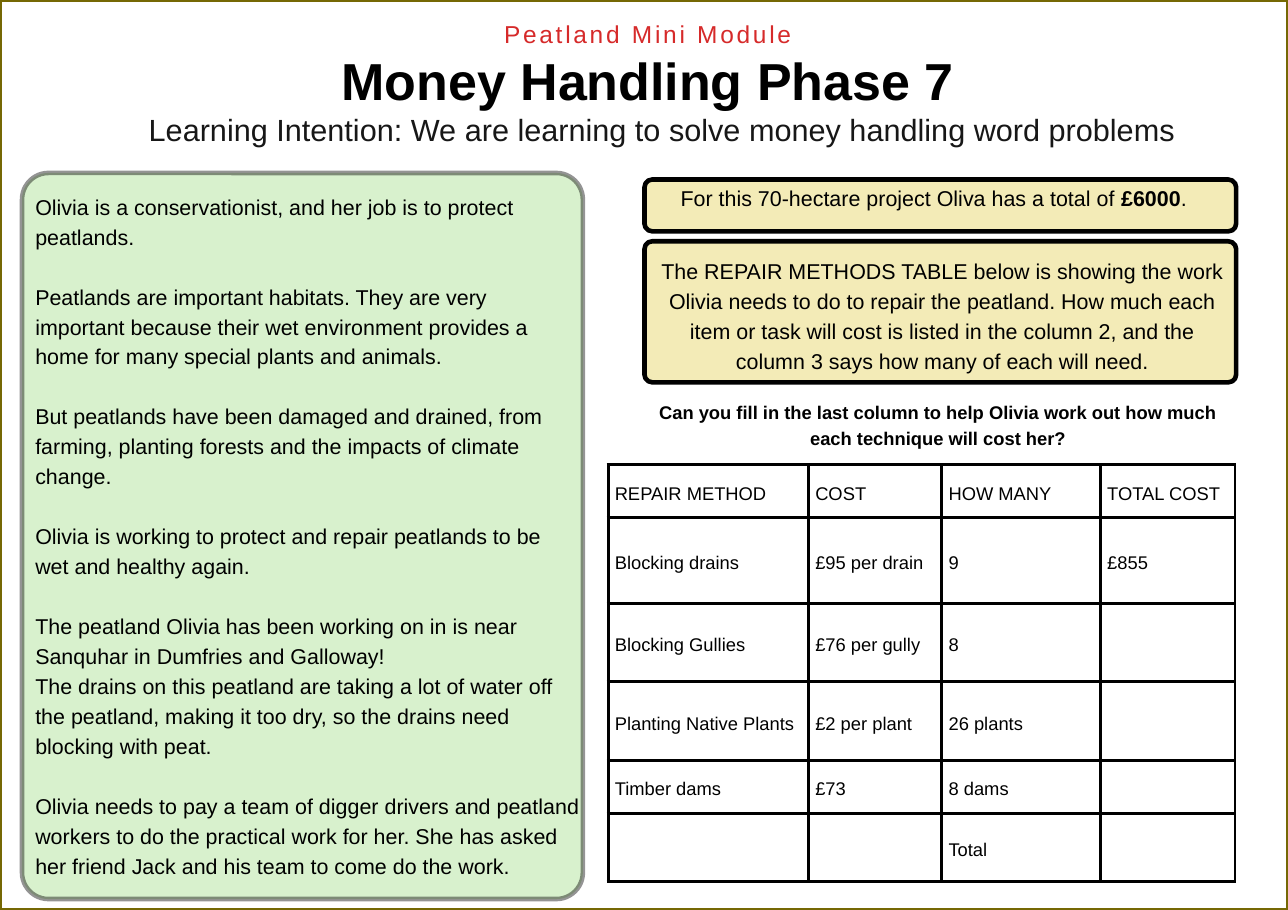
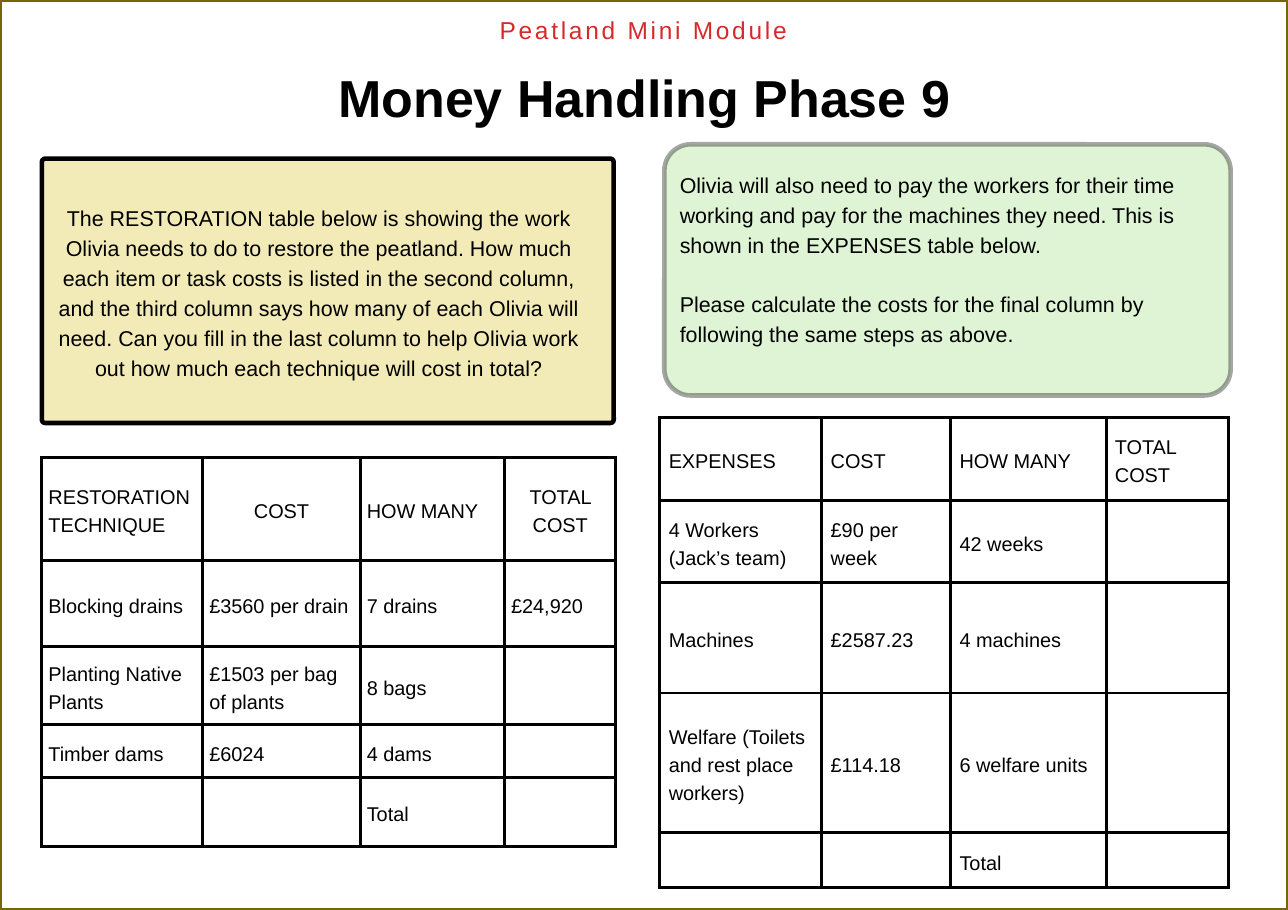
from lxml import etree
from pptx import Presentation
from pptx.dml.color import RGBColor
from pptx.enum.shapes import MSO_SHAPE
from pptx.enum.text import MSO_ANCHOR, PP_ALIGN
from pptx.oxml.ns import qn
from pptx.util import Inches, Pt

RECTANGLE, ROUNDED = MSO_SHAPE.RECTANGLE, MSO_SHAPE.ROUNDED_RECTANGLE
TOP, MIDDLE = MSO_ANCHOR.TOP, MSO_ANCHOR.MIDDLE
LEFT, CENTER = PP_ALIGN.LEFT, PP_ALIGN.CENTER
BLACK = RGBColor(0x00, 0x00, 0x00)
CHARCOAL = RGBColor(0x17, 0x17, 0x17)
RED = RGBColor(0xD6, 0x2A, 0x2A)
GREEN = RGBColor(0xA3, 0xE0, 0x89)
CREAM = RGBColor(0xF3, 0xEB, 0xB7)
OLIVE = RGBColor(0x75, 0x68, 0x04)
FONT = "Arial"
WIDTH, HEIGHT = 11.69, 8.26


def write_text(frame, text, size=14, color=BLACK, bold=False, align=LEFT,
               leading=1.4, tracking=0, joined=(), insets=None, anchor=TOP):
    if insets is not None:
        frame.word_wrap = True
        frame.vertical_anchor = anchor
        (frame.margin_left, frame.margin_top,
         frame.margin_right, frame.margin_bottom) = map(Inches, insets)
    for number, line in enumerate(text.split("\n")):
        paragraph = frame.add_paragraph() if number else frame.paragraphs[0]
        paragraph.alignment = align
        if leading:
            paragraph.line_spacing = Pt(size * leading)
        if number and number not in joined:
            paragraph.space_before = Pt(size * leading)
        for index, part in enumerate(line.split("**")):
            run = paragraph.add_run()
            run.text = part
            run.font.name = FONT
            run.font.size = Pt(size)
            run.font.color.rgb = color
            run.font.bold = bold or index % 2 == 1
            if tracking:
                run._r.get_or_add_rPr().set("spc", str(tracking))


def add_panel(slide, box, radius, fill, opacity=100):
    shape = slide.shapes.add_shape(ROUNDED, *map(Inches, box))
    shape.shadow.inherit = False
    shape.adjustments[0] = radius / min(box[2:])
    shape.fill.solid()
    shape.fill.fore_color.rgb = fill
    shape.line.color.rgb = BLACK
    shape.line.width = Pt(3)
    if opacity < 100:
        for color in shape._element.spPr.iter(qn("a:srgbClr")):
            etree.SubElement(color, qn("a:alpha"), val=str(opacity * 1000))
    return shape.text_frame


presentation = Presentation()
presentation.slide_width = Inches(WIDTH)
presentation.slide_height = Inches(HEIGHT)
phase7, phase9 = [presentation.slides.add_slide(presentation.slide_layouts[6])
                  for _ in range(2)]

add_panel(phase7, (0.2, 1.57, 5.09, 6.59), 0.24, GREEN, 42)
add_panel(phase9, (6.03, 1.31, 5.14, 2.28), 0.24, GREEN, 35)

callouts = [
    (phase7, (5.85, 1.63, 5.37, 0.47), 0.07, (0.07, 0, 0.19, 0.18),
     "For this 70-hectare project Oliva has a total of **£6000**."),
    (phase7, (5.85, 2.19, 5.37, 1.28), 0.07, (0.08, 0.05, 0.04, 0.01),
     "The REPAIR METHODS TABLE below is showing the work Olivia needs to do to "
     "repair the peatland. How much each item or task will cost is listed in the "
     "column 2, and the column 3 says how many of each will need."),
    (phase9, (0.38, 1.44, 5.19, 2.4), 0.03, (0.05, 0.07, 0.21, 0.07),
     "The RESTORATION table below is showing the work Olivia needs to do to restore "
     "the peatland. How much each item or task costs is listed in the second column, "
     "and the third column says how many of each Olivia will need. Can you fill in "
     "the last column to help Olivia work out how much each technique will cost in "
     "total?"),
]
for slide, box, radius, insets, text in callouts:
    write_text(add_panel(slide, box, radius, CREAM), text, align=CENTER,
               insets=insets, anchor=MIDDLE)

story = """Olivia is a conservationist, and her job is to protect peatlands.
Peatlands are important habitats. They are very important because their wet environment provides a home for many special plants and animals.
But peatlands have been damaged and drained, from farming, planting forests and the impacts of climate change.
Olivia is working to protect and repair peatlands to be wet and healthy again.
The peatland Olivia has been working on in is near Sanquhar in Dumfries and Galloway!
The drains on this peatland are taking a lot of water off the peatland, making it too dry, so the drains need blocking with peat.
Olivia needs to pay a team of digger drivers and peatland workers to do the practical work for her. She has asked her friend Jack and his team to come do the work."""
expenses_note = """Olivia will also need to pay the workers for their time working and pay for the machines they need. This is shown in the EXPENSES table below.
Please calculate the costs for the final column by following the same steps as above."""
module_style = dict(size=16, color=RED, align=CENTER, tracking=180)
title_style = dict(size=34, bold=True, align=CENTER, leading=50.4 / 34)
text_boxes = [
    (phase7, (3.49, 0.13, 4.78, 0.28), "Peatland Mini Module", module_style),
    (phase7, (0.86, 0.31, 10.04, 0.64), "Money Handling Phase 7", title_style),
    (phase7, (1.35, 1.01, 9.64, 0.34),
     "Learning Intention: We are learning to solve money handling word problems",
     dict(size=20, color=CHARCOAL, leading=0)),
    (phase7, (0.32, 1.72, 4.95, 6.44), story, dict(joined=(5,))),
    (phase7, (5.83, 3.61, 5.37, 0.46),
     "Can you fill in the last column to help Olivia work out how much each "
     "technique will cost her?", dict(size=12, bold=True, align=CENTER)),
    (phase9, (3.45, 0.09, 4.78, 0.28), "Peatland Mini Module", module_style),
    (phase9, (0.83, 0.46, 10.04, 0.64), "Money Handling Phase 9", title_style),
    (phase9, (6.17, 1.52, 4.86, 1.66), expenses_note, {}),
]
for slide, box, text, style in text_boxes:
    text_box = slide.shapes.add_textbox(*map(Inches, box))
    write_text(text_box.text_frame, text, insets=(0, 0, 0, 0), **style)

tables = [
    (phase7, (5.52, 4.22), 12, 0.06, (), [1.82, 1.21, 1.44, 1.22],
     [0.48, 0.78, 0.71, 0.71, 0.48, 0.62],
     [["REPAIR METHOD", "COST", "HOW MANY", "TOTAL COST"],
      ["Blocking drains", "£95 per drain", "9", "£855"],
      ["Blocking Gullies", "£76 per gully", "8", ""],
      ["Planting Native Plants", "£2 per plant", "26 plants", ""],
      ["Timber dams", "£73", "8 dams", ""],
      ["", "", "Total", ""]]),
    (phase9, (0.38, 4.15), 13, 0.06, (1, 3), [1.46, 1.43, 1.31, 1.01],
     [0.94, 0.78, 0.71, 0.48, 0.62],
     [["RESTORATION TECHNIQUE", "COST", "HOW MANY", "TOTAL COST"],
      ["Blocking drains", "£3560 per drain", "7 drains", "£24,920"],
      ["Planting Native Plants", "£1503 per bag of plants", "8 bags", ""],
      ["Timber dams", "£6024", "4 dams", ""],
      ["", "", "Total", ""]]),
    (phase9, (5.99, 3.79), 13, 0.08, (), [1.47, 1.17, 1.41, 1.11],
     [0.75, 0.75, 1, 1.27, 0.5],
     [["EXPENSES", "COST", "HOW MANY", "TOTAL COST"],
      ["4 Workers (Jack’s team)", "£90 per week", "42 weeks", ""],
      ["Machines", "£2587.23", "4 machines", ""],
      ["Welfare (Toilets and rest place workers)", "£114.18", "6 welfare units", ""],
      ["", "", "Total", ""]]),
]
for slide, corner, size, margin, centered, widths, heights, rows in tables:
    box = (*corner, sum(widths), sum(heights))
    table = slide.shapes.add_table(len(rows), len(widths), *map(Inches, box)).table
    table.first_row = table.horz_banding = False
    for column, width in zip(table.columns, widths):
        column.width = Inches(width)
    for row, height, texts in zip(table.rows, heights, rows):
        row.height = Inches(height)
        for index, (cell, text) in enumerate(zip(row.cells, texts)):
            cell.vertical_anchor = MIDDLE
            cell.margin_left = cell.margin_right = Inches(margin)
            cell.margin_top = cell.margin_bottom = Inches(margin)
            properties = cell._tc.get_or_add_tcPr()
            for side in ("a:lnL", "a:lnR", "a:lnT", "a:lnB"):
                border = etree.SubElement(properties, qn(side), w=str(Pt(2.25)))
                fill = etree.SubElement(border, qn("a:solidFill"))
                etree.SubElement(fill, qn("a:srgbClr"), val=str(BLACK))
            cell.fill.background()
            if text:
                is_centered = texts is rows[0] and index in centered
                write_text(cell.text_frame, text, size=size,
                           align=CENTER if is_centered else LEFT)

for slide in presentation.slides:
    frame = slide.shapes.add_shape(RECTANGLE, 0, 0, Inches(WIDTH), Inches(HEIGHT))
    frame.shadow.inherit = False
    frame.fill.background()
    frame.line.color.rgb = OLIVE
    frame.line.width = Pt(2.25)

presentation.save("out.pptx")
